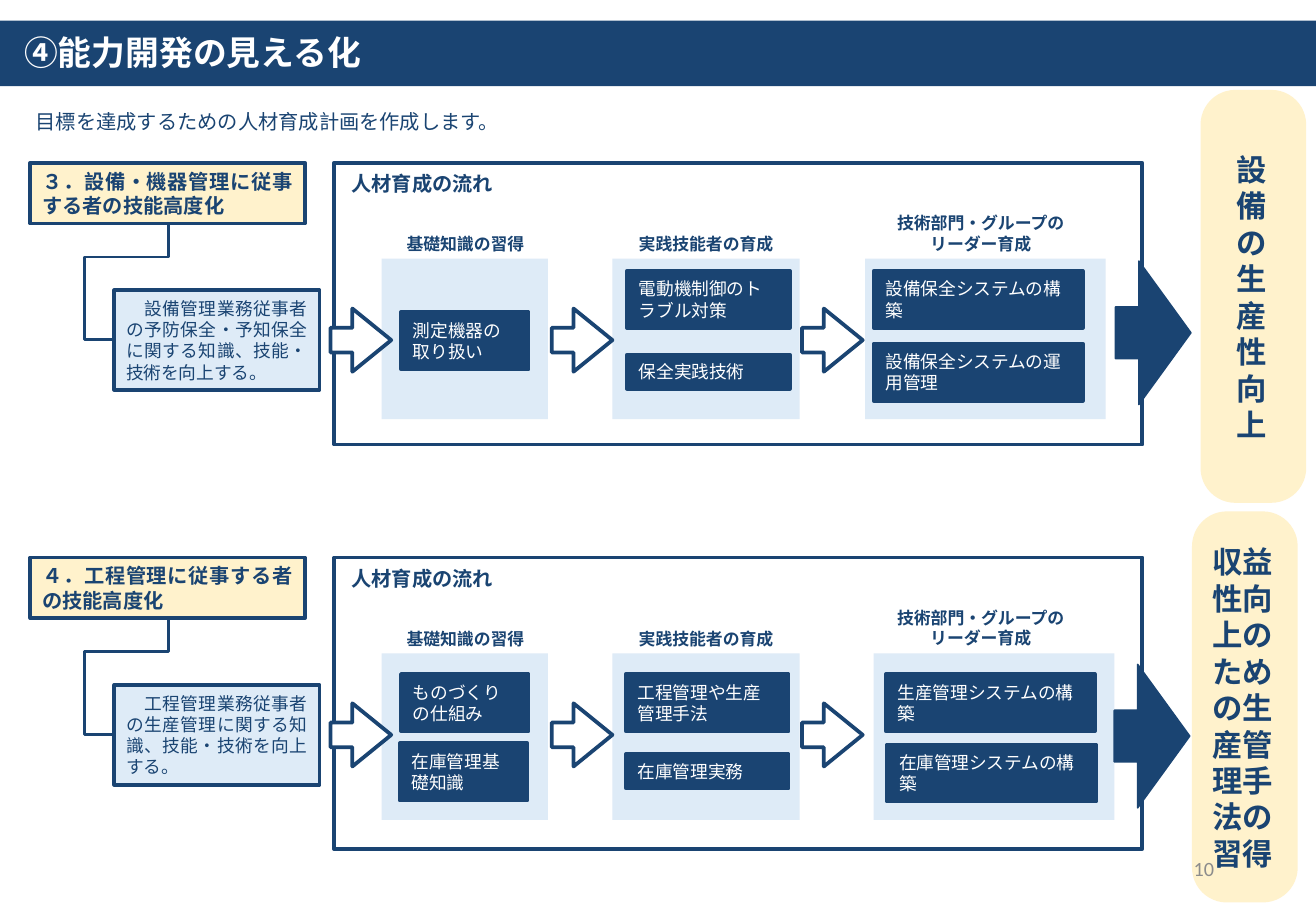
"""Build the slide that maps skill development for two job tracks."""
import lxml.etree
import pptx
import pptx.dml.color
import pptx.enum.shapes
import pptx.enum.text
import pptx.oxml
import pptx.oxml.ns
import pptx.util

Inches = pptx.util.Inches
PRESET = pptx.enum.shapes.MSO_SHAPE
ANCHOR = pptx.enum.text.MSO_ANCHOR
ALIGN = pptx.enum.text.PP_ALIGN
FIT = pptx.enum.text.MSO_AUTO_SIZE
qn = pptx.oxml.ns.qn

NAVY, WHITE, PALE_BLUE, CREAM, GRAY = "1A4472", "FFFFFF", "DEEBF7", "FFF2CC", "8C8C8C"
JAPANESE = "Noto Sans CJK JP"

deck = pptx.Presentation()
deck.slide_width, deck.slide_height = Inches(10.83), Inches(7.5)
page = deck.slides.add_slide(deck.slide_layouts[6])


def rgb(color):
    return pptx.dml.color.RGBColor.from_string(color)


def add_box(text, left, top, width, height, preset=PRESET.RECTANGLE, fill=None, line=None,
            weight=2.25, adjust=(), size=10.5, color=NAVY, bold=False, font=JAPANESE,
            align=ALIGN.LEFT, anchor=ANCHOR.MIDDLE, wrap=True, fit=FIT.SHAPE_TO_FIT_TEXT,
            vertical=None):
    place = [Inches(length) for length in (left, top, width, height)]
    if fill:
        box = page.shapes.add_shape(preset, *place)
        box.shadow.inherit = False
        box.fill.solid()
        box.fill.fore_color.rgb = rgb(fill)
        if line:
            box.line.color.rgb = rgb(line)
            box.line.width = pptx.util.Pt(weight)
        else:
            box.line.fill.background()
        for index, value in enumerate(adjust):
            box.adjustments[index] = value
    else:
        box = page.shapes.add_textbox(*place)
    if not text:
        return
    frame = box.text_frame
    frame.word_wrap, frame.auto_size, frame.vertical_anchor = wrap, fit, anchor
    if vertical:
        box.element.txBody.bodyPr.set("vert", vertical)
    for index, words in enumerate(text.split("\n")):
        para = frame.add_paragraph() if index else frame.paragraphs[0]
        para.alignment = align
        span = para.add_run()
        span.text = words
        span.font.name, span.font.size, span.font.bold = font, pptx.util.Pt(size), bold
        span.font.color.rgb = rgb(color)
        east_asian = lxml.etree.SubElement(span.font._element, qn("a:ea"))
        east_asian.set("typeface", font)


add_box("", 0, 0.17, 10.83, 0.54, fill=NAVY)
add_box("④能力開発の見える化", 0.1, 0.21, 3.07, 0.45, size=20, color=WHITE, bold=True,
        anchor=ANCHOR.TOP, wrap=False)
add_box("　目標を達成するための人材育成計画を作成します。", 0.03, 0.85, 10.46, 0.3, size=12)

stage_labels = [
    ("基礎知識の習得", 3.15, 1.87, 1.36, 0.27),
    ("実践技能者の育成", 5.13, 1.87, 1.36, 0.27),
    ("技術部門・グループの\nリーダー育成", 7.21, 1.7, 1.72, 0.44),
]
tracks = [
    {
        "shift": 0, "frame_height": 2.32, "panel_height": 1.32, "leader_left": 7.12,
        "title": "３．設備・機器管理に従事する者の技能高度化",
        "aim": "　設備管理業務従事者の予防保全・予知保全に関する知識、技能・技術を向上する。",
        "courses": [
            ("測定機器の取り扱い", 3.3, 2.57, 1.05, 0.47),
            ("電動機制御のトラブル対策", 5.16, 2.23, 1.34, 0.47),
            ("保全実践技術", 5.16, 2.92, 1.34, 0.28),
            ("設備保全システムの構築", 7.19, 2.23, 1.72, 0.47),
            ("設備保全システムの運用管理", 7.19, 2.83, 1.72, 0.47),
        ],
        "goal": ("設備の生産性向上", 10.05, 0.93, 0.5, 3.03),
        "goal_panel": (9.88, 0.74, 0.87, 3.4), "goal_arrow": (9.18, 2.15),
    },
    {
        "shift": 3.25, "frame_height": 2.4, "panel_height": 1.37, "leader_left": 7.19,
        "title": "４．工程管理に従事する者の技能高度化",
        "aim": "　工程管理業務従事者の生産管理に関する知識、技能・技術を向上する。",
        "courses": [
            ("ものづくりの仕組み", 3.3, 5.55, 1.05, 0.47),
            ("在庫管理基礎知識", 3.29, 6.12, 1.05, 0.47),
            ("工程管理や生産管理手法", 5.15, 5.55, 1.34, 0.47),
            ("在庫管理実務", 5.15, 6.21, 1.34, 0.28),
            ("生産管理システムの構築", 7.29, 5.55, 1.72, 0.47),
            ("在庫管理システムの構築", 7.3, 6.13, 1.72, 0.47),
        ],
        "goal": ("収益性向上のための生産管理手法の習得", 9.83, 4.39, 0.79, 2.87),
        "goal_panel": (9.81, 4.21, 0.87, 3.22), "goal_arrow": (9.17, 5.47),
    },
]

for track in tracks:
    shift = track["shift"]
    add_box("", 2.75, 1.34 + shift, 6.65, track["frame_height"], fill=WHITE, line=NAVY)
    for left, width in ((3.14, 1.37), (5.04, 1.54), (track["leader_left"], 1.98)):
        add_box("", left, 2.13 + shift, width, track["panel_height"], fill=PALE_BLUE)
    add_box("人材育成の流れ", 2.72, 1.36 + shift, 1.51, 0.3, size=12, bold=True,
            align=ALIGN.CENTER)
    for label, left, top, width, height in stage_labels:
        add_box(label, left, top + shift, width, height, size=10, bold=True,
                align=ALIGN.CENTER)
    for course in track["courses"]:
        add_box(*course, fill=NAVY, line=NAVY, color=WHITE)

    add_box(track["title"], 0.25, 1.34 + shift, 2.26, 0.5, fill=CREAM, line=NAVY, size=12,
            bold=True, align=ALIGN.JUSTIFY)
    add_box(track["aim"], 0.94, 2.39 + shift, 1.69, 0.82, fill=PALE_BLUE, line=NAVY,
            align=ALIGN.JUSTIFY, fit=FIT.NONE)
    for left in (2.72, 4.54, 6.6):
        add_box("", left, 2.54 + shift, 0.5, 0.52, preset=PRESET.RIGHT_ARROW, fill=WHITE,
                line=NAVY, adjust=(0.39, 0.64))

    elbow = page.shapes.add_connector(
        pptx.enum.shapes.MSO_CONNECTOR.ELBOW,
        Inches(0.69), Inches(2.1 + shift), Inches(1.64), Inches(2.54 + shift))
    elbow.line.color.rgb = rgb(NAVY)
    elbow.line.width = pptx.util.Pt(1.5)
    properties = elbow.element.spPr
    properties.find(qn("a:xfrm")).set("rot", "5400000")
    geometry = properties.find(qn("a:prstGeom"))
    geometry.set("prst", "bentConnector4")
    guides = geometry.find(qn("a:avLst"))
    if guides is None:
        guides = lxml.etree.SubElement(geometry, qn("a:avLst"))
    for name, value in (("adj1", 28500), ("adj2", 157000)):
        guide = lxml.etree.SubElement(guides, qn("a:gd"))
        guide.set("name", name)
        guide.set("fmla", f"val {value}")
    lxml.etree.SubElement(properties, qn("a:effectLst"))

    add_box("", *track["goal_panel"], preset=PRESET.ROUNDED_RECTANGLE, fill=CREAM,
            adjust=(0.33,))
    add_box(*track["goal"], size=18, bold=True, align=ALIGN.CENTER,
            vertical="wordArtVertRtl")
    add_box("", *track["goal_arrow"], 0.62, 1.18, preset=PRESET.RIGHT_ARROW, fill=NAVY,
            line=NAVY, weight=1, adjust=(0.36, 0.69))

add_box("10", 7.65, 6.95, 2.44, 0.4, size=12, color=GRAY, font="Calibri",
        align=ALIGN.RIGHT, fit=FIT.NONE)

deck.save("out.pptx")
